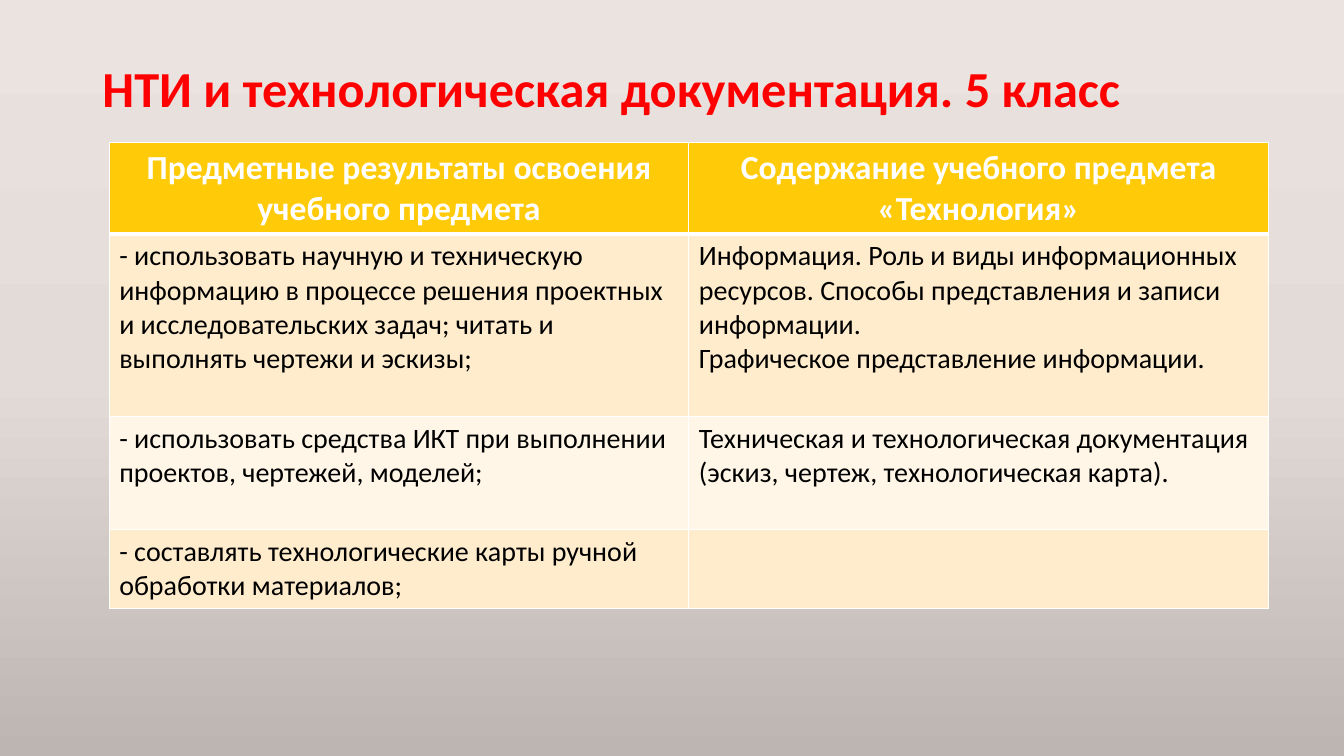
from copy import deepcopy
from dataclasses import dataclass
from typing import Any

from lxml.etree import SubElement
from pptx import Presentation
from pptx.dml.color import RGBColor
from pptx.enum.text import MSO_ANCHOR, MSO_AUTO_SIZE, PP_ALIGN
from pptx.oxml.ns import qn
from pptx.util import Inches, Pt

# Grid: 160 columns across, 750 rows down
SLIDE_WIDTH, SLIDE_HEIGHT = Inches(13.33), Inches(7.5)
COLUMN, ROW = SLIDE_WIDTH / 160, SLIDE_HEIGHT / 750


@dataclass(frozen=True)
class Theme:
    font: str = "Calibri"
    title_size: int = 36
    header_size: int = 24
    body_size: int = 20
    title: str = "FF0000"
    header_fill: str = "FFCA08"
    header_text: str = "FFFFFF"
    body_text: str = "000000"
    bands: tuple[str, str] = ("FFECCC", "FFF6E7")
    border: str = "FFFFFF"
    background: tuple[str, str, str] = ("EBE3DF", "E2DBD8", "BCB5B2")


@dataclass(frozen=True)
class Area:
    left: int
    top: int
    width: int
    height: int

    def place(self) -> dict[str, int]:
        return {
            "left": round(self.left * COLUMN),
            "top": round(self.top * ROW),
            "width": round(self.width * COLUMN),
            "height": round(self.height * ROW),
        }


@dataclass(frozen=True)
class TableRow:
    height: int
    cells: tuple[str, str]


THEME = Theme()
TITLE = "НТИ и технологическая документация. 5 класс"
TITLE_AREA = Area(11, 40, 138, 101)
TABLE_ROWS = (
    TableRow(91, (
        "Предметные результаты освоения учебного предмета",
        "Содержание учебного предмета «Технология»",
    )),
    TableRow(181, (
        "- использовать научную и техническую информацию в процессе решения "
        "проектных и исследовательских задач; читать и выполнять чертежи и эскизы;",
        "Информация. Роль и виды информационных ресурсов. Способы представления "
        "и записи информации.\nГрафическое представление информации.",
    )),
    TableRow(112, (
        "- использовать средства ИКТ при выполнении проектов, чертежей, моделей;",
        "Техническая и технологическая документация "
        "(эскиз, чертеж, технологическая карта).",
    )),
    TableRow(78, (
        "- составлять технологические карты ручной обработки материалов;",
        "",
    )),
)
TABLE_AREA = Area(13, 141, 138, sum(row.height for row in TABLE_ROWS))


def apply(target: Any, values: dict[str, Any]) -> None:
    for name, value in values.items():
        setattr(target, name, value)


def format_text(text_frame: Any, size: int, color: str, bold: bool,
                **paragraph_format: Any) -> None:
    for paragraph in text_frame.paragraphs:
        apply(paragraph, paragraph_format)
        font_values = {"name": THEME.font, "size": Pt(size), "bold": bold}
        apply(paragraph.font, font_values)
        paragraph.font.color.rgb = RGBColor.from_string(color)
        for run in paragraph.runs:
            apply(run.font, font_values)
            run.font.color.rgb = RGBColor.from_string(color)


def draw_background(slide: Any) -> None:
    fill = slide.background.fill
    fill.gradient()
    fill.gradient_angle = 270
    stop_list = slide.element.xpath(".//a:gsLst")[0]
    stop_list.append(deepcopy(stop_list[-1]))
    for index, (stop, color) in enumerate(zip(fill.gradient_stops, THEME.background)):
        stop.position = index / 2
        stop.color.rgb = RGBColor.from_string(color)


def draw_title(slide: Any) -> None:
    title = slide.shapes.title
    apply(title, TITLE_AREA.place())
    title.text_frame.text = TITLE
    apply(title.text_frame, {
        "word_wrap": True,
        "auto_size": MSO_AUTO_SIZE.NONE,
        "vertical_anchor": MSO_ANCHOR.MIDDLE,
    })
    format_text(title.text_frame, THEME.title_size, THEME.title, True,
                alignment=PP_ALIGN.LEFT, line_spacing=0.9)


def draw_borders(cell: Any, widths: dict[str, int]) -> None:
    properties = cell._tc.get_or_add_tcPr()
    for position, (side, width) in enumerate(widths.items()):
        line = SubElement(properties, qn(f"a:{side}"), w=str(Pt(width)))
        solid = SubElement(line, qn("a:solidFill"))
        SubElement(solid, qn("a:srgbClr"), val=THEME.border)
        properties.insert(position, line)


def draw_table(slide: Any) -> None:
    frame = slide.shapes.add_table(len(TABLE_ROWS), 2, **TABLE_AREA.place())
    table = frame.table
    for row_index, table_row in enumerate(TABLE_ROWS):
        is_header = row_index == 0
        table.rows[row_index].height = round(table_row.height * ROW)
        fill_color = THEME.header_fill if is_header else THEME.bands[(row_index - 1) % 2]
        for cell, text in zip(table.rows[row_index].cells, table_row.cells):
            cell.text = text
            cell.fill.solid()
            cell.fill.fore_color.rgb = RGBColor.from_string(fill_color)
            draw_borders(cell, {
                "lnL": 1,
                "lnR": 1,
                "lnT": 3 if row_index == 1 else 1,
                "lnB": 3 if is_header else 1,
            })
            format_text(
                cell.text_frame,
                THEME.header_size if is_header else THEME.body_size,
                THEME.header_text if is_header else THEME.body_text,
                is_header,
                alignment=PP_ALIGN.CENTER if is_header else PP_ALIGN.LEFT,
            )


def main() -> None:
    presentation = Presentation()
    apply(presentation, {"slide_width": SLIDE_WIDTH, "slide_height": SLIDE_HEIGHT})
    title_only_layout = presentation.slide_layouts[5]
    slide = presentation.slides.add_slide(title_only_layout)
    draw_background(slide)
    draw_title(slide)
    draw_table(slide)
    presentation.save("out.pptx")


if __name__ == "__main__":
    main()
